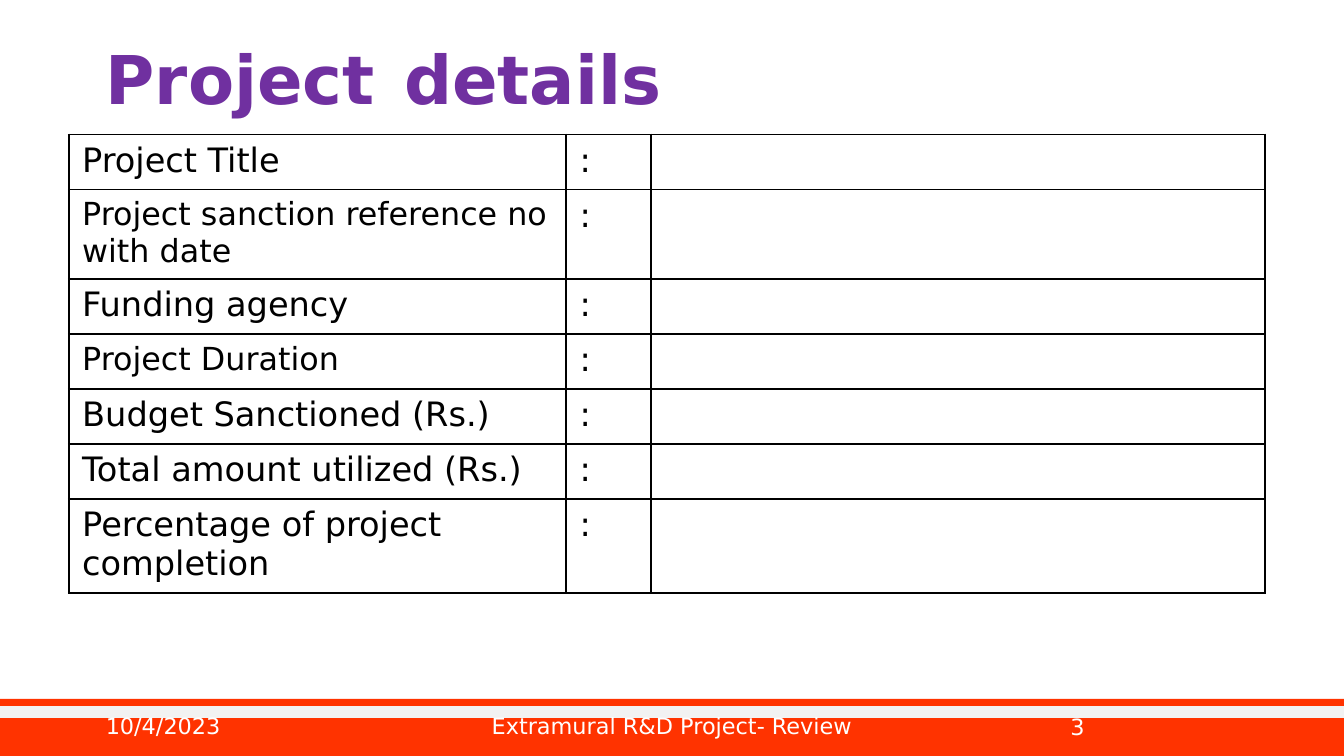
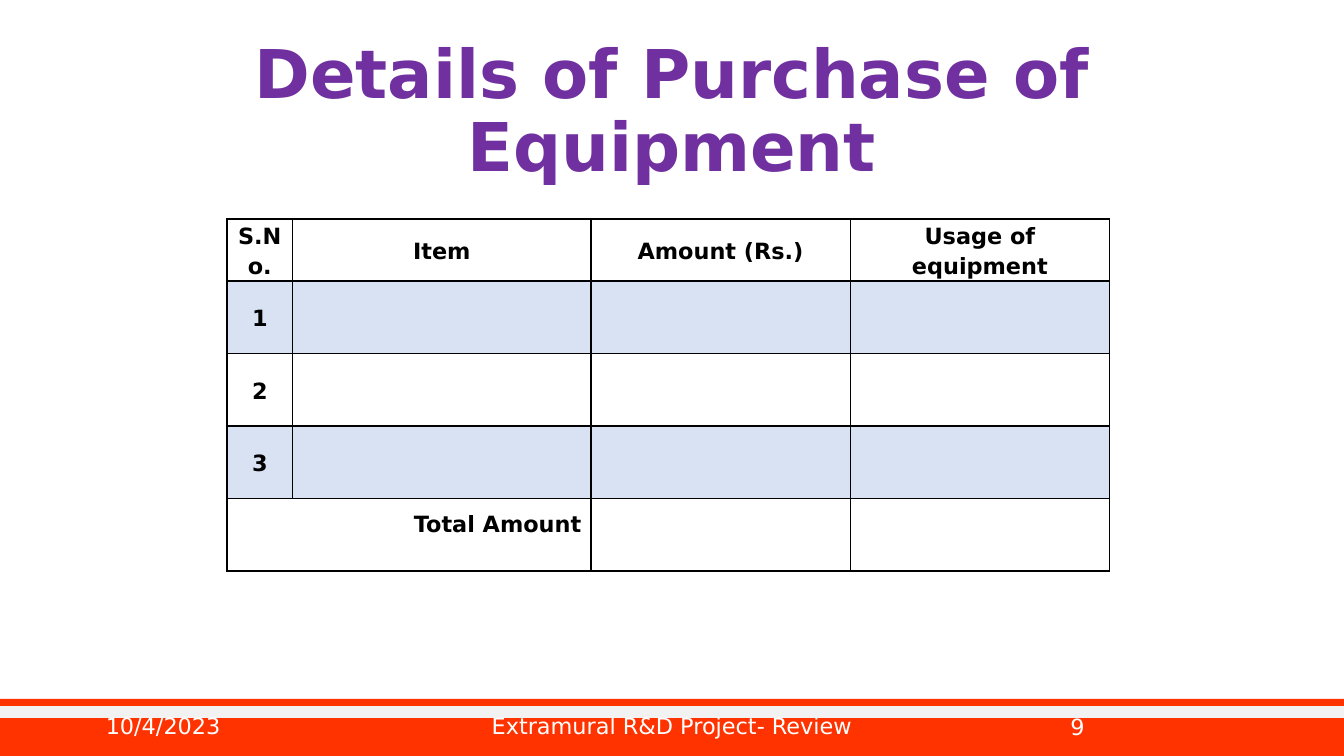
"""Builds two project review slides with a shared title style and footer."""
from lxml.etree import SubElement
from pptx import Presentation
from pptx.dml.color import RGBColor
from pptx.enum.shapes import MSO_CONNECTOR as CONN, MSO_SHAPE as SHAPE
from pptx.enum.text import MSO_ANCHOR as ANCHOR, PP_ALIGN as ALIGN
from pptx.oxml import parse_xml
from pptx.oxml.ns import nsdecls, qn
from pptx.util import Cm, Pt

ORANGE = RGBColor(0xFF, 0x33, 0x00)
PALE = RGBColor(0xF2, 0xF2, 0xF2)
PURPLE = RGBColor(0x70, 0x30, 0xA0)
GREEN = RGBColor(0x54, 0x82, 0x35)
BLUE = RGBColor(0x44, 0x72, 0xC4)
WHITE = RGBColor(0xFF, 0xFF, 0xFF)
BLACK = RGBColor(0x00, 0x00, 0x00)

FONT = "DejaVu Sans"
WIDTH, HEIGHT = 25.4, 14.29
LEFT, RULE_Y = 1.75, 13.46
TITLE = {"size": Pt(36), "bold": True}
FOOTER = {"size": Pt(12)}
HEAD = {"size": Pt(12), "bold": True}
CENTERED = {"alignment": ALIGN.CENTER, "line_spacing": 1.15, "space_after": Pt(10)}
TOTAL = {"alignment": ALIGN.RIGHT, "line_spacing": 1.5, "space_after": Pt(10)}
TIGHT = {"margin_left": Cm(0.18), "margin_right": Cm(0.18),
         "margin_top": 0, "margin_bottom": 0}
MIDDLE = {**TIGHT, "vertical_anchor": ANCHOR.MIDDLE}


def apply(obj, fmt):
    for name, value in fmt.items():
        setattr(obj, name, value)


class Deck:
    def __init__(self):
        self.prs = Presentation()
        self.prs.slide_width, self.prs.slide_height = Cm(WIDTH), Cm(HEIGHT)

    def slide(self, number):
        self.s = self.prs.slides.add_slide(self.prs.slide_layouts[6])
        self.band()
        self.text(LEFT, RULE_Y, 5.72, 0.53, "10/4/2023", WHITE, FOOTER)
        self.text(8.41, RULE_Y, 8.58, 0.53, "Extramural R&D Project- Review",
                  WHITE, FOOTER, {"alignment": ALIGN.CENTER})
        self.text(17.93, RULE_Y, 2.82, 0.56, str(number),
                  WHITE, FOOTER, {"alignment": ALIGN.RIGHT})

    def band(self):
        sp = self.s.shapes.add_shape(SHAPE.RECTANGLE, Cm(-0.05), Cm(13.21),
                                     Cm(WIDTH + 0.05), Cm(HEIGHT - 13.21))
        sp.shadow.inherit = False
        sp.fill.solid()
        sp.fill.fore_color.rgb = ORANGE
        sp.line.fill.background()
        ln = self.s.shapes.add_connector(CONN.STRAIGHT, Cm(-0.05), Cm(RULE_Y),
                                         Cm(WIDTH), Cm(RULE_Y))
        ln.line.color.rgb, ln.line.width = PALE, Pt(6)
        SubElement(ln._element.spPr, qn("a:effectLst"))

    def run(self, p, text, color, fmt):
        r = p.add_run()
        r.text = text
        apply(r.font, {"name": FONT, **fmt})
        r.font.color.rgb = color

    def text(self, x, y, w, h, text, color, fmt, para={}):
        tf = self.s.shapes.add_textbox(Cm(x), Cm(y), Cm(w), Cm(h)).text_frame
        apply(tf, {"word_wrap": True, "vertical_anchor": ANCHOR.MIDDLE})
        p = tf.paragraphs[0]
        apply(p, para)
        if text:
            self.run(p, text, color, fmt)
        return p

    def title(self, text, h, align=ALIGN.LEFT):
        return self.text(LEFT, 0.76, 21.89, h, text, PURPLE, TITLE,
                         {"alignment": align, "line_spacing": 0.9})

    def table(self, x, y, cols, rows):
        tbl = self.s.shapes.add_table(len(rows), len(cols), Cm(x), Cm(y),
                                      Cm(sum(cols)), Cm(sum(rows))).table
        apply(tbl, {"first_row": False, "horz_banding": False})
        for col, w in zip(tbl.columns, cols):
            col.width = Cm(w)
        for row, h in zip(tbl.rows, rows):
            row.height = Cm(h)
        for c in tbl.iter_cells():
            c.fill.background()
            self.borders(c)
        return tbl

    def borders(self, c):
        for i, side in enumerate("LRTB"):
            c._tc.tcPr.insert(i, parse_xml(
                f'<a:ln{side} {nsdecls("a")} w="{Pt(1)}"><a:solidFill>'
                f'<a:srgbClr val="{BLACK}"/></a:solidFill></a:ln{side}>'))

    def cell(self, c, text, fmt, para={}, frame={}):
        apply(c, frame)
        p = c.text_frame.paragraphs[0]
        apply(p, para)
        self.run(p, text, BLACK, fmt)

    def tint(self, c, color, percent):
        c.fill.solid()
        c.fill.fore_color.rgb = color
        clr = c._tc.tcPr.find(qn("a:solidFill")).find(qn("a:srgbClr"))
        SubElement(clr, qn("a:alpha")).set("val", str(percent * 1000))


def project_details(deck):
    deck.slide(3)
    p = deck.title("", 1.4)
    deck.run(p, "Project", PURPLE, TITLE)
    deck.run(p, " ", GREEN, {**TITLE, "size": Pt(45)})
    deck.run(p, "details", PURPLE, TITLE)
    fields = [("Project Title", 18), ("Project sanction reference no with date", 17),
              ("Funding agency", 18), ("Project Duration", 17),
              ("Budget Sanctioned (Rs.)", 18), ("Total amount utilized (Rs.)", 18),
              ("Percentage of project completion", 18)]
    tbl = deck.table(1.3, 2.54, [9.4, 1.6, 11.61], [1.04] * len(fields))
    for i, (field, size) in enumerate(fields):
        deck.cell(tbl.cell(i, 0), field, {"size": Pt(size)})
        deck.cell(tbl.cell(i, 1), ":", {"size": Pt(18)})


def equipment(deck):
    deck.slide(9)
    deck.title("Details of Purchase of Equipment", 2.77, ALIGN.CENTER)
    tbl = deck.table(4.29, 4.14, [1.24, 5.64, 4.9, 4.9], [1.12] + [1.37] * 4)
    for j, head in enumerate(["S.No.", "Item", "Amount (Rs.)", "Usage of equipment"]):
        deck.cell(tbl.cell(0, j), head, HEAD, CENTERED, MIDDLE)
    for i in range(1, 4):
        deck.cell(tbl.cell(i, 0), str(i), HEAD, CENTERED, MIDDLE)
        if i % 2:
            for j in range(4):
                deck.tint(tbl.cell(i, j), BLUE, 20)
    tbl.cell(4, 0).merge(tbl.cell(4, 1))
    deck.cell(tbl.cell(4, 0), "Total Amount", HEAD, TOTAL, TIGHT)


def main():
    deck = Deck()
    project_details(deck)
    equipment(deck)
    deck.prs.save("out.pptx")


if __name__ == "__main__":
    main()
